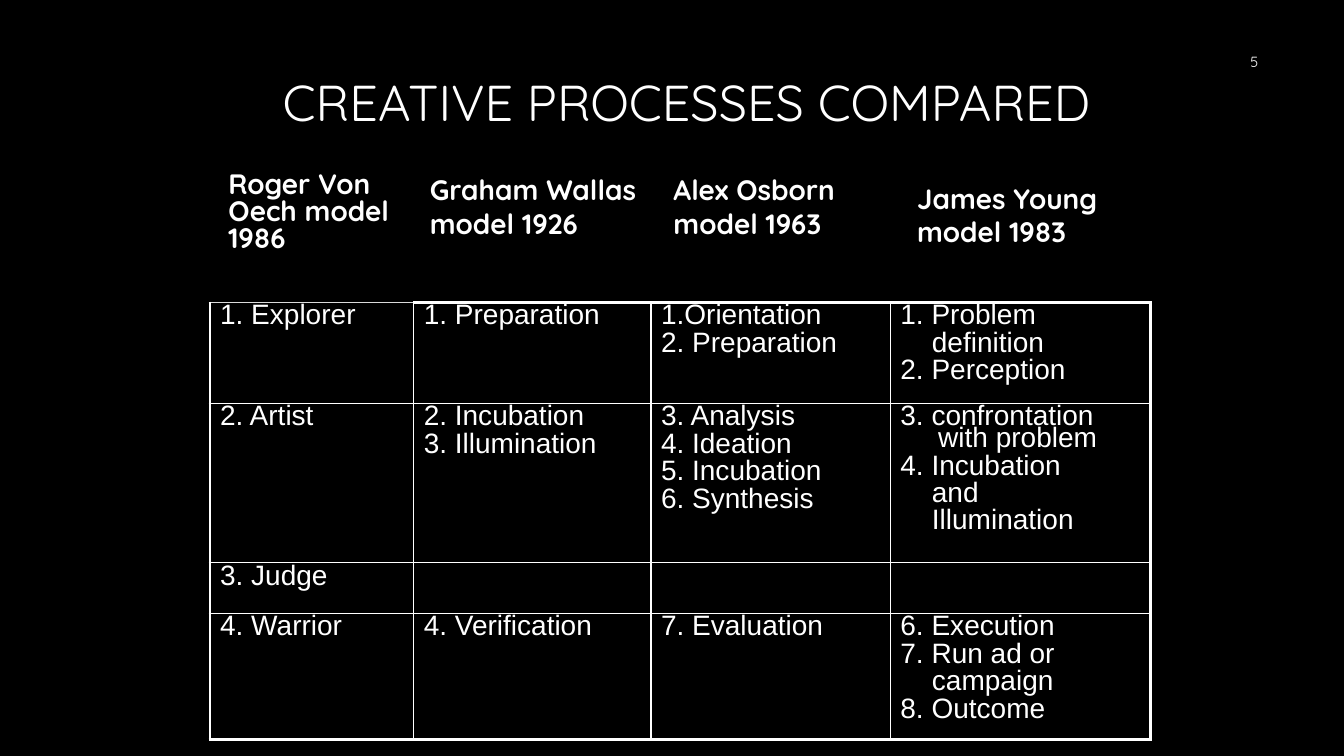
from lxml import etree
from pptx import Presentation
from pptx import util as u
from pptx.dml.color import RGBColor
from pptx.enum import text
from pptx.oxml import ns

BLACK = RGBColor(0, 0, 0)
WHITE = RGBColor(255, 255, 255)
PALE = RGBColor(0xDA, 0xDA, 0xDA)
PX = 9525
HANG, CONTINUED = 36, 30

COLUMNS = [194, 226, 228, 248]
ROWS = [96, 152, 48, 120]
STAGES = [
    [["1. Explorer"], ["1. Preparation"], ["1.Orientation", "2. Preparation"],
     ["1. Problem", "definition", "2. Perception"]],
    [["2. Artist"], ["2. Incubation", "3. Illumination"],
     ["3. Analysis", "4. Ideation", "5. Incubation", "6. Synthesis"],
     ["3. confrontation\vwith problem", "4. Incubation", "and", "Illumination"]],
    [["3. Judge"], [], [], []],
    [["4. Warrior"], ["4. Verification"], ["7. Evaluation"],
     ["6. Execution", "7. Run ad or", "campaign", "8. Outcome"]],
]
MODELS = [
    ("Roger Von Oech model 1986", (208, 160, 192, 134), 0.8),
    ("Graham Wallas model 1926", (400, 160, 216, 107), 1.0),
    ("Alex Osborn model 1963", (632, 160, 200, 74), 1.0),
    ("James Young model 1983", (864, 168, 216, 74), 1.0),
]


class Deck:
    title_font = {"name": "Quicksand", "size": u.Pt(36), "bold": False}
    number_font = {"name": "Quicksand", "size": u.Pt(10.5), "bold": False}
    model_font = {"name": "Quicksand", "size": u.Pt(20), "bold": True}
    stage_font = {"name": "Arial", "size": u.Pt(20), "bold": False}

    def __init__(self, width, height):
        self.show = Presentation()
        self.show.slide_width, self.show.slide_height = width * PX, height * PX
        self.slide = self.show.slides.add_slide(self.show.slide_layouts[5])
        background = self.slide.background.fill
        background.solid()
        background.fore_color.rgb = BLACK

    def typeset(self, paragraph, wording, font, **layout):
        paragraph.text = wording
        for target, values in ((paragraph.font, font), (paragraph, layout)):
            for key, value in values.items():
                setattr(target, key, value)
        paragraph.font.color.rgb = WHITE

    def title(self, wording, box):
        heading = self.slide.shapes.title
        for side, length in zip(("left", "top", "width", "height"), box):
            setattr(heading, side, length * PX)
        frame = heading.text_frame
        frame.auto_size = text.MSO_AUTO_SIZE.NONE
        frame.vertical_anchor = text.MSO_ANCHOR.MIDDLE
        self.typeset(frame.paragraphs[0], wording, self.title_font,
                     alignment=text.PP_ALIGN.RIGHT, line_spacing=0.9)

    def label(self, wording, box, font, frame_format, **layout):
        frame = self.slide.shapes.add_textbox(*(n * PX for n in box)).text_frame
        frame.word_wrap = True
        for key, value in frame_format.items():
            setattr(frame, key, value)
        self.typeset(frame.paragraphs[0], wording, font, **layout)

    def border(self, cell, side, points, color):
        line = etree.SubElement(cell._tc.get_or_add_tcPr(), ns.qn("a:ln" + side),
                                w=str(u.Pt(points)))
        fill = etree.SubElement(line, ns.qn("a:solidFill"))
        etree.SubElement(fill, ns.qn("a:srgbClr"), val=str(color))

    def stages(self, cell, lines):
        frame = cell.text_frame
        for i, wording in enumerate(lines):
            paragraph = frame.add_paragraph() if i else frame.paragraphs[0]
            numbered = wording[0].isdigit()
            properties = paragraph._p.get_or_add_pPr()
            properties.set("marL", str((HANG if numbered else CONTINUED) * PX))
            properties.set("indent", str(-HANG * PX if numbered else 0))
            self.typeset(paragraph, wording, self.stage_font, line_spacing=0.7,
                         space_before=u.Pt(4 if i else 0))

    def table(self, left, top, columns, rows, contents):
        grid = self.slide.shapes.add_table(
            len(rows), len(columns), left * PX, top * PX,
            sum(columns) * PX, sum(rows) * PX).table
        grid.first_row = grid.horz_banding = False
        for column, width in zip(grid.columns, columns):
            column.width = width * PX
        for row, height in zip(grid.rows, rows):
            row.height = height * PX
        for r, line in enumerate(contents):
            for c, lines in enumerate(line):
                cell = grid.cell(r, c)
                self.stages(cell, lines)
                corner = r == c == 0
                outer = {"L": c == 0, "R": c == len(columns) - 1,
                         "T": r == 0 and not corner, "B": r == len(rows) - 1}
                for side, thick in outer.items():
                    self.border(cell, side, 2.25 if thick else 1,
                                PALE if corner and side == "T" else WHITE)
                cell.fill.background()


def main():
    deck = Deck(1280, 720)
    deck.title("CREATIVE PROCESSES COMPARED", (232, 80, 816, 40))
    deck.label("5", (920, 40, 288, 38), deck.number_font,
               {"vertical_anchor": text.MSO_ANCHOR.MIDDLE},
               alignment=text.PP_ALIGN.RIGHT)
    deck.table(200, 288, COLUMNS, ROWS, STAGES)
    for model, box, spacing in MODELS:
        deck.label(model, box, deck.model_font,
                   {"auto_size": text.MSO_AUTO_SIZE.SHAPE_TO_FIT_TEXT},
                   line_spacing=spacing)
    deck.show.save("out.pptx")


if __name__ == "__main__":
    main()
